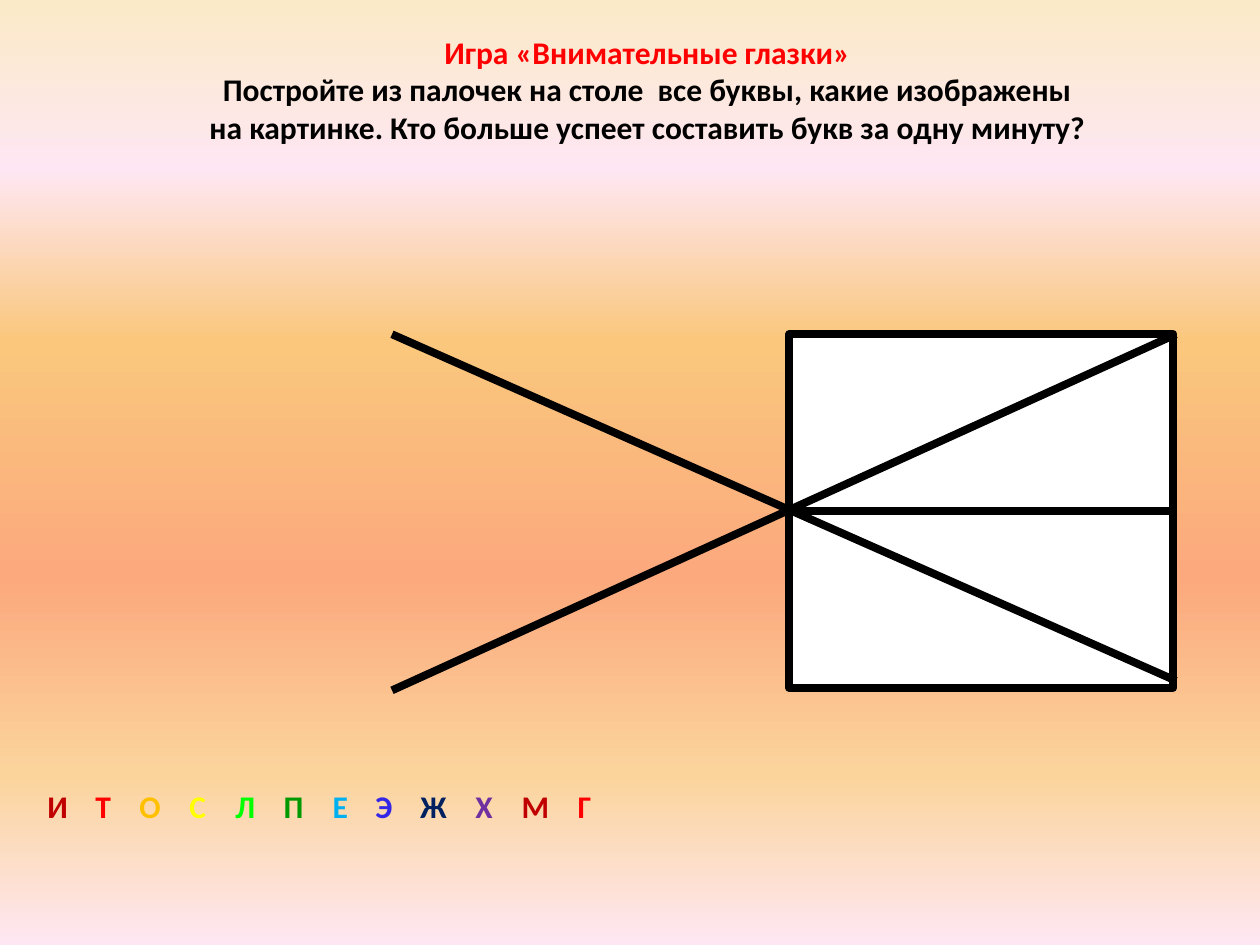
from lxml.etree import SubElement
from pptx import Presentation
from pptx.dml.color import RGBColor
from pptx.enum.shapes import MSO_CONNECTOR, MSO_SHAPE
from pptx.enum.text import MSO_ANCHOR, MSO_AUTO_SIZE, PP_ALIGN
from pptx.oxml.ns import qn
from pptx.util import Pt

BACKGROUND = [(0, "FBEAC7"), (18, "FEE7F2"), (36, "FAC77D"),
              (61, "FBA97D"), (82, "FBD49C"), (100, "FEE7F2")]
TITLE = [
    ("Игра «Внимательные глазки»", "FF0000"),
    ("Постройте из палочек на столе  все буквы, какие изображены", "000000"),
    ("на картинке. Кто больше успеет составить букв за одну минуту?", "000000"),
]
# Letter, colour, distance from the start of the row
LETTERS = [
    ("И", "C00000", 0), ("Т", "FF0000", 27.4), ("О", "FFC000", 52.6),
    ("С", "FFFF00", 81.1), ("Л", "00FF00", 107.4), ("П", "009900", 134.9),
    ("Е", "00B0F0", 162.9), ("Э", "3426E6", 187.4), ("Ж", "002060", 213.1),
    ("Х", "7030A0", 244.6), ("М", "C00000", 270.9), ("Г", "FF0000", 302.9),
]


def rgb(value):
    return RGBColor.from_string(value)


class SlideBuilder:
    font = "Calibri"
    size = 18
    ink = "000000"
    stroke = 4.5

    def __init__(self, s):
        self.s = s

    def background(self, stops):
        fill = self.s.background.fill
        fill.gradient()
        fill.gradient_angle = 270
        stop_list = next(self.s._element.iter(qn("a:gsLst")))
        for old in list(stop_list):
            stop_list.remove(old)
        for percent, color in stops:
            stop = SubElement(stop_list, qn("a:gs"), pos=str(percent * 1000))
            SubElement(stop, qn("a:srgbClr"), val=color)

    def format_run(self, r, color):
        r.font.name = self.font
        r.font.size = Pt(self.size)
        r.font.bold = True
        r.font.color.rgb = rgb(color)

    def frame(self, sp):
        tf = sp.text_frame
        tf.word_wrap = True
        tf.auto_size = MSO_AUTO_SIZE.NONE
        tf.vertical_anchor = MSO_ANCHOR.TOP
        return tf

    def title(self, x, y, w, h, lines):
        sp = self.s.shapes.title
        sp.left, sp.top, sp.width, sp.height = Pt(x), Pt(y), Pt(w), Pt(h)
        tf = self.frame(sp)
        tf.text = "\n".join(text for text, _ in lines)
        for p, (_, color) in zip(tf.paragraphs, lines):
            p.alignment = PP_ALIGN.CENTER
            self.format_run(p.runs[0], color)

    def letter_row(self, x, y, w, h, letters):
        sp = self.s.shapes.add_textbox(Pt(x), Pt(y), Pt(w), Pt(h))
        p = self.frame(sp).paragraphs[0]
        tabs = SubElement(p._p.get_or_add_pPr(), qn("a:tabLst"))
        for letter, color, offset in letters:
            r = p.add_run()
            r.text = letter
            if offset:
                r.text = "\t" + letter
                SubElement(tabs, qn("a:tab"), pos=str(Pt(offset)), algn="l")
            self.format_run(r, color)

    def rectangle(self, x, y, w, h, fill):
        sp = self.s.shapes.add_shape(MSO_SHAPE.RECTANGLE, Pt(x), Pt(y), Pt(w), Pt(h))
        sp.shadow.inherit = False
        sp.fill.solid()
        sp.fill.fore_color.rgb = rgb(fill)
        self.outline(sp)

    def line(self, x1, y1, x2, y2):
        sp = self.s.shapes.add_connector(
            MSO_CONNECTOR.STRAIGHT, Pt(x1), Pt(y1), Pt(x2), Pt(y2))
        self.outline(sp)
        SubElement(sp._element.spPr, qn("a:effectLst"))

    def outline(self, sp):
        sp.line.color.rgb = rgb(self.ink)
        sp.line.width = Pt(self.stroke)


def main():
    prs = Presentation()
    prs.slide_width, prs.slide_height = Pt(720), Pt(540)
    slide = SlideBuilder(prs.slides.add_slide(prs.slide_layouts[5]))

    # Background and heading
    slide.background(BACKGROUND)
    slide.title(20, 15, 700, 130, TITLE)

    # Figure made of sticks: a square, two crossing diagonals, a middle bar
    left, top, width, height = 451, 191, 219.5, 202
    right = left + width
    slide.rectangle(left, top, width, height, "FFFFFF")
    slide.line(224, top, 672, 389)
    slide.line(224, 394.5, 672, top)
    slide.line(left, top + height / 2, right, top + height / 2)

    # Letters hidden in the figure
    slide.letter_row(20, 446, 680, 58, LETTERS)

    prs.save("out.pptx")


if __name__ == "__main__":
    main()
